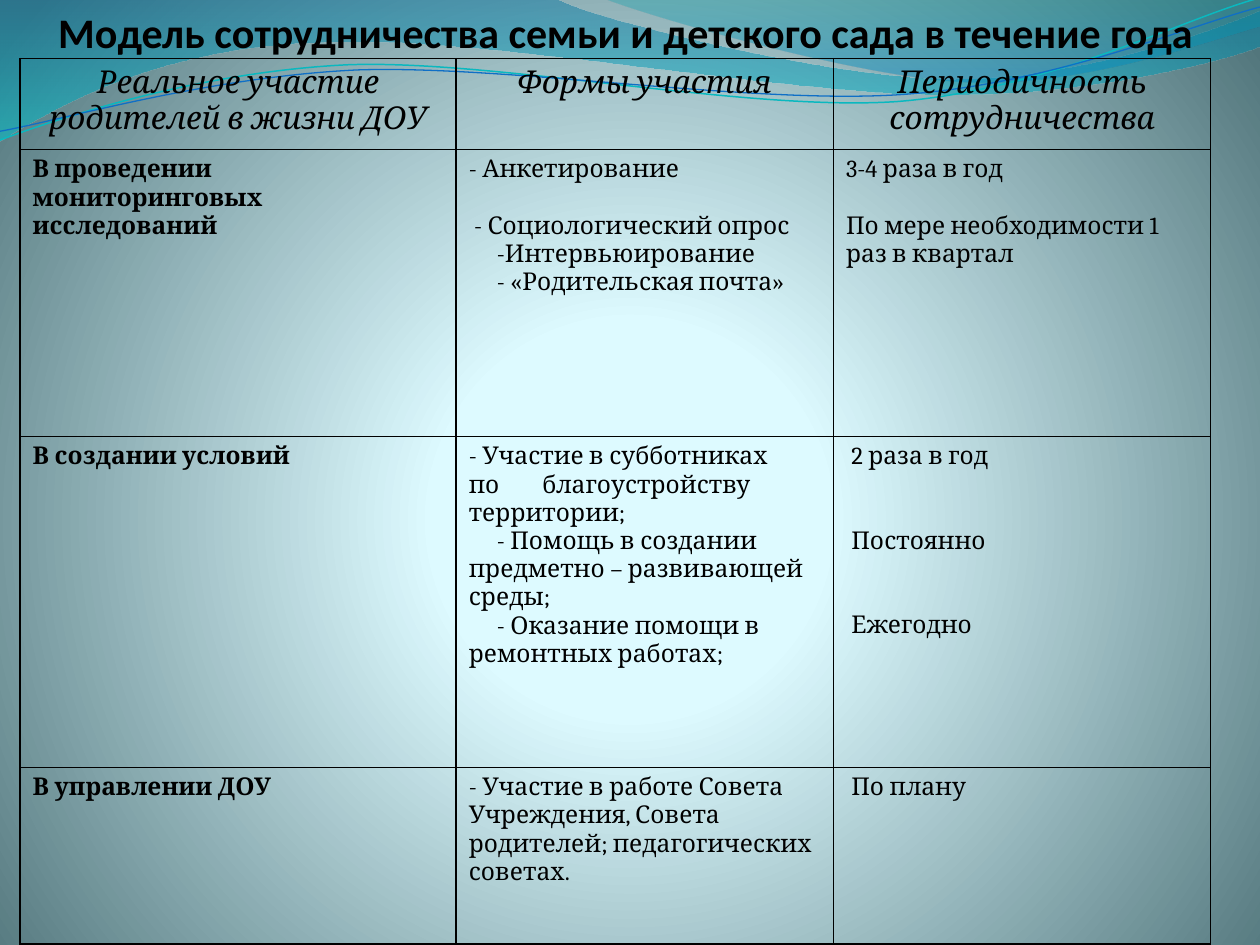
import math

from lxml import etree
from pptx import Presentation
from pptx.dml.color import RGBColor
from pptx.enum import text as txt
from pptx.oxml.ns import qn
from pptx.util import Pt

BLACK = RGBColor(0x00, 0x00, 0x00)
GLOW = RGBColor(0xDE, 0xFB, 0xFF)
PALE = RGBColor(0xDD, 0xFA, 0xFF)
SLATE = RGBColor(0x52, 0x76, 0x7C)
DEEP_BLUE = RGBColor(0x00, 0x74, 0xA1)
TURQUOISE = RGBColor(0x00, 0xC6, 0xCF)
TEAL = RGBColor(0x00, 0xA1, 0xA9)
AZURE = RGBColor(0x00, 0x8B, 0xBF)
AQUA = RGBColor(0x0A, 0xB8, 0xBF)
BLUE = RGBColor(0x0F, 0x6F, 0xC6)

# Waves in points: a pair is a corner, six numbers are a Bezier segment
BROAD_WAVE = [(0, 0), (317, -1), (343, 12, 478, 45, 546, 45),
              (614, 45, 690, 19, 720, 6), (721, 26),
              (708, 32, 626, 55, 537, 54), (446, 54, 275, 20, 185, 24),
              (93, 26, 33, 60, -1, 81), (0, 0)]
RIGHT_WAVE = [(345, -1), (367, 8, 491, 45, 554, 47),
              (616, 50, 692, 23, 720, 15), (720, 0), (345, -1)]
AQUA_CURVE = [(0, 80), (35, 67, 114, 41, 199, 37),
              (284, 34, 427, 64, 513, 58), (600, 51, 675, 11, 719, -1)]
BLUE_CURVE = [(0, 75), (34, 69, 118, 44, 204, 40),
              (290, 37, 430, 60, 516, 54), (602, 48, 678, 15, 720, 4)]
TILT = -2.7  # degrees, for both thin curves

COLUMNS = [249.2, 215.6, 215.6]
ROWS = [52, 164, 189, 101]
LINE = 16  # height of one line of table text
STEP = 16  # first-line indent of list items
HEADINGS = ["Реальное участие родителей в жизни ДОУ", "Формы участия",
            "Периодичность сотрудничества"]
# Each paragraph: text, first-line indent, space before
AREAS = [
    ("В проведении мониторинговых исследований",
     [("- Анкетирование", 0, 0), ("- Социологический опрос", 3, LINE),
      ("-Интервьюирование", STEP, 0), ("- «Родительская почта»", STEP, 0)],
     [("3-4 раза в год", 0, 0),
      ("По мере необходимости 1 раз в квартал", 0, LINE)]),
    ("В создании условий",
     [("- Участие в субботниках\nпо\tблагоустройству территории;", 0, 0),
      ("- Помощь в создании предметно – развивающей среды;", STEP, 0),
      ("- Оказание помощи в ремонтных работах;", STEP, 0)],
     [("2 раза в год", 3, 0), ("Постоянно", 3, 2 * LINE),
      ("Ежегодно", 3, 2 * LINE)]),
    ("В управлении ДОУ",
     [("- Участие в работе Совета Учреждения, Совета родителей; "
       "педагогических советах.", 0, 0)],
     [("По плану", 3, 0)]),
]


def child(parent, tag, **attributes):
    return etree.SubElement(parent, qn(tag), attributes)


def set_gradient(fill, owner, stops, center=None):
    """Stops are (percent, colour, opacity percent); runs downwards unless centred."""
    fill.gradient()
    gradient = next(owner.iter(qn("a:gradFill")))
    for part in list(gradient):
        gradient.remove(part)
    stop_list = child(gradient, "a:gsLst")
    for position, color, opacity in stops:
        stop = child(stop_list, "a:gs", pos=str(position * 1000))
        shade = child(stop, "a:srgbClr", val=str(color))
        if opacity < 100:
            child(shade, "a:alpha", val=str(opacity * 1000))
    if center:
        circle = child(gradient, "a:path", path="circle")
        child(circle, "a:fillToRect",
              **{side: str(value * 1000) for side, value in zip("ltrb", center)})
    else:
        child(gradient, "a:lin", ang="5400000", scaled="0")


def untilt(point, tilt, center=(359.5, 42)):
    """Turn a point back, so that the tilt of its shape returns it to its place."""
    angle = math.radians(-tilt)
    dx, dy = point[0] - center[0], point[1] - center[1]
    return (Pt(center[0] + dx * math.cos(angle) - dy * math.sin(angle)),
            Pt(center[1] + dx * math.sin(angle) + dy * math.cos(angle)))


def add_outline(slide, outline, closed, tilt):
    points = [untilt(segment[i:i + 2], tilt)
              for segment in outline for i in range(0, len(segment), 2)]
    builder = slide.shapes.build_freeform(*points[0], scale=1.0)
    builder.add_line_segments(points[1:], close=closed)
    wave = builder.convert_to_shape()
    # Join each three line ends of a Bezier segment into one curve
    ends = iter(list(wave.element.iter(qn("a:lnTo"))))
    for segment in outline[1:]:
        end = next(ends)
        if len(segment) == 6:
            curve = etree.Element(qn("a:cubicBezTo"))
            end.addprevious(curve)
            for control in (end, next(ends), next(ends)):
                curve.append(control[0])
                control.getparent().remove(control)
    wave.rotation = tilt
    return wave


def add_wave(slide, outline, stops=None, color=None, width=0, tilt=0):
    wave = add_outline(slide, outline, bool(stops), tilt)
    wave.shadow.inherit = False
    if stops:
        set_gradient(wave.fill, wave.element, stops)
        wave.line.fill.background()
    else:
        wave.fill.background()
        wave.line.color.rgb = color
        wave.line.width = Pt(width)


def write(paragraph, words, font="Cambria", size=14, bold=False, italic=False,
          centered=False, indent=0, before=0):
    for i, line in enumerate(words.split("\n")):
        if i:
            paragraph.add_line_break()
        run = paragraph.add_run()
        run.text = line
        run.font.name, run.font.size = font, Pt(size)
        run.font.bold, run.font.italic = bold, italic
        run.font.color.rgb = BLACK
    paragraph.alignment = txt.PP_ALIGN.CENTER if centered else txt.PP_ALIGN.LEFT
    paragraph.space_before = Pt(before)
    properties = paragraph._p.get_or_add_pPr()
    if indent:
        properties.set("indent", str(Pt(indent)))
    if "\t" in words:
        child(child(properties, "a:tabLst"), "a:tab", pos=str(Pt(42)), algn="l")


def frame_cell(cell):
    properties = cell._tc.get_or_add_tcPr()
    for side in ("a:lnL", "a:lnR", "a:lnT", "a:lnB"):
        border = child(properties, side, w=str(Pt(1)))
        child(child(border, "a:solidFill"), "a:srgbClr", val=str(BLACK))
    cell.fill.background()


def write_items(cell, items):
    frame = cell.text_frame
    for i, (words, indent, before) in enumerate(items):
        paragraph = frame.add_paragraph() if i else frame.paragraphs[0]
        write(paragraph, words, indent=indent, before=before)


def add_plan(slide):
    plan = slide.shapes.add_table(len(ROWS), len(COLUMNS), Pt(11.5), Pt(33.5),
                                  Pt(sum(COLUMNS)), Pt(sum(ROWS))).table
    plan.first_row = plan.horz_banding = False
    for column, width in zip(plan.columns, COLUMNS):
        column.width = Pt(width)
    for row, height in zip(plan.rows, ROWS):
        row.height = Pt(height)
    for cell in plan.iter_cells():
        frame_cell(cell)
    for i, heading in enumerate(HEADINGS):
        write(plan.cell(0, i).text_frame.paragraphs[0], heading,
              size=18, italic=True, centered=True)
    for i, (area, forms, timing) in enumerate(AREAS, 1):
        write(plan.cell(i, 0).text_frame.paragraphs[0], area, bold=True)
        write_items(plan.cell(i, 1), forms)
        write_items(plan.cell(i, 2), timing)


def add_title(slide, words):
    title = slide.shapes.add_textbox(Pt(11.5), Pt(0), Pt(692), Pt(498)).text_frame
    title.word_wrap = True
    write(title.paragraphs[0], words, font="Calibri", size=24, bold=True,
          centered=True, before=4.8)


def main():
    deck = Presentation()
    deck.slide_width, deck.slide_height = Pt(720), Pt(540)
    slide = deck.slides.add_slide(deck.slide_layouts[6])

    # Background glow and waves
    set_gradient(slide.background.fill, slide.element,
                 [(0, GLOW, 100), (25, PALE, 100), (100, SLATE, 100)],
                 center=(10, 110, 10, 100))
    add_wave(slide, BROAD_WAVE, stops=[(0, DEEP_BLUE, 45), (100, TURQUOISE, 55)])
    add_wave(slide, RIGHT_WAVE, stops=[(0, TEAL, 30), (80, AZURE, 45)])
    add_wave(slide, AQUA_CURVE, color=AQUA, width=0.85, tilt=TILT)
    add_wave(slide, BLUE_CURVE, color=BLUE, width=0.75, tilt=TILT)

    # Title and cooperation plan
    add_title(slide, "Модель сотрудничества семьи и детского сада в течение года")
    add_plan(slide)
    deck.save("out.pptx")


if __name__ == "__main__":
    main()
